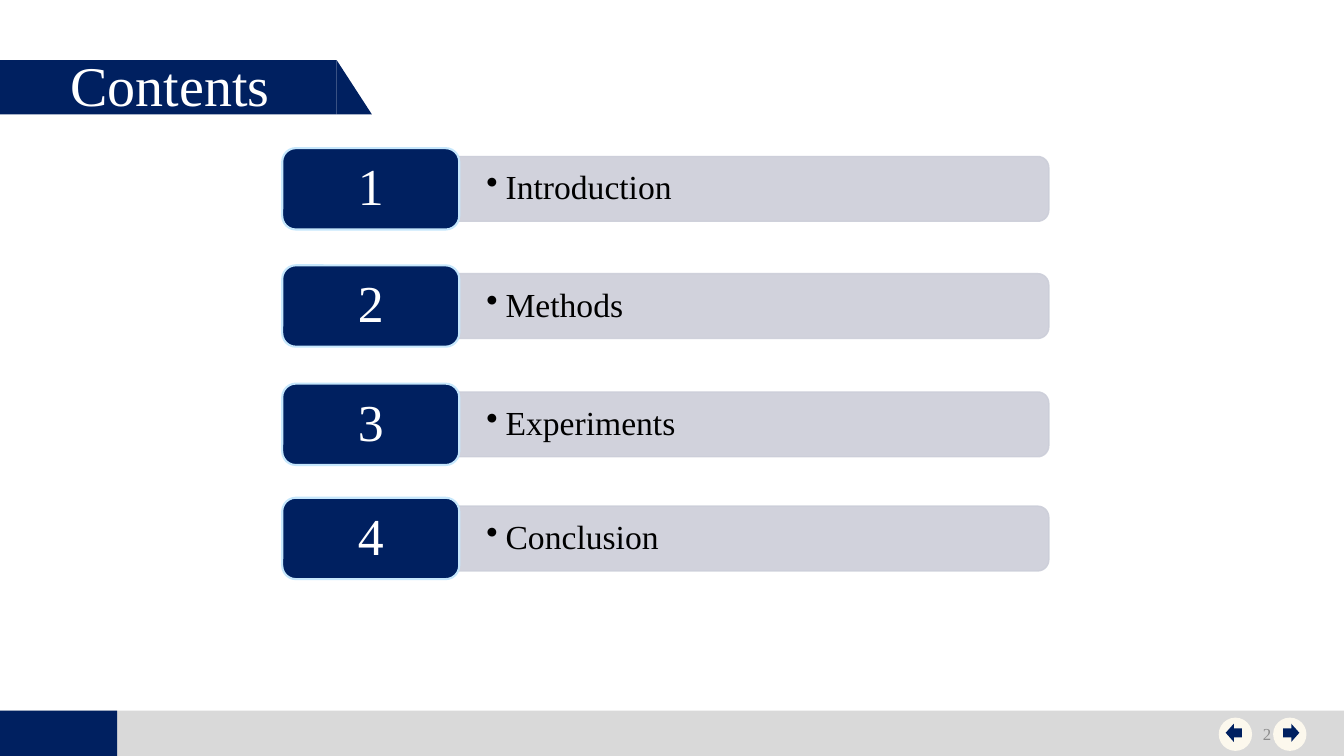
from dataclasses import dataclass
from math import cos, pi, sin

from lxml.etree import SubElement
from pptx import Presentation
from pptx.dml.color import RGBColor
from pptx.enum.shapes import MSO_SHAPE
from pptx.enum.text import MSO_ANCHOR, MSO_AUTO_SIZE, PP_ALIGN
from pptx.oxml.ns import qn
from pptx.util import Inches, Pt

NAVY = RGBColor(0x00, 0x20, 0x60)
GREY = RGBColor(0xD9, 0xD9, 0xD9)
BAR = RGBColor(0xCC, 0xCE, 0xD9)
SKY = RGBColor(0xC6, 0xE7, 0xFC)
CREAM = RGBColor(0xFC, 0xF8, 0xED)
WHITE = RGBColor(0xFF, 0xFF, 0xFF)
BLACK = RGBColor(0x00, 0x00, 0x00)
PAGE_GREY = RGBColor(0x8C, 0x8C, 0x8C)
FONT = "Times New Roman"

prs = Presentation()
prs.slide_width, prs.slide_height = Inches(13.33), Inches(7.5)
slide = prs.slides.add_slide(prs.slide_layouts[5])


@dataclass
class Box:
    """A rectangle in percent of the slide's width and height."""
    left: float
    top: float
    width: float
    height: float

    def emu(self) -> tuple[int, int, int, int]:
        w, h = prs.slide_width / 100, prs.slide_height / 100
        return (round(self.left * w), round(self.top * h),
                round(self.width * w), round(self.height * h))


@dataclass
class Section:
    number: int
    name: str
    top: float


@dataclass
class NavButton:
    left: float
    arrow_left: float
    arrow: MSO_SHAPE


SECTIONS = [
    Section(1, "Introduction", 19.6),
    Section(2, "Methods", 35.1),
    Section(3, "Experiments", 50.75),
    Section(4, "Conclusion", 65.85),
]
BUTTONS = [
    NavButton(94.73, 95.48, MSO_SHAPE.RIGHT_ARROW),
    NavButton(90.68, 91.2, MSO_SHAPE.LEFT_ARROW),
]


def paint(sp, fill: RGBColor, line: RGBColor | None = None, width: float = 1) -> None:
    sp.shadow.inherit = False
    sp.fill.solid()
    sp.fill.fore_color.rgb = fill
    if line is None:
        sp.line.fill.background()
    else:
        sp.line.color.rgb = line
        sp.line.width = Pt(width)


def add_block(kind: MSO_SHAPE, box: Box, fill: RGBColor, **line):
    sp = slide.shapes.add_shape(kind, *box.emu())
    paint(sp, fill, **line)
    return sp


def add_bar(box: Box, radius: int):
    """Draw a bar whose two right corners are rounded."""
    x, y, w, h = box.emu()
    right, steps = x + w - radius, 8
    arc = [(right + radius * cos(a), radius * sin(a))
           for a in (i * pi / 2 / steps for i in range(steps + 1))]
    lower = [(px, y + h - radius + dy) for px, dy in arc]
    upper = [(px, y + radius - dy) for px, dy in reversed(arc)]
    builder = slide.shapes.build_freeform(x, y)
    builder.add_line_segments(upper + lower + [(x, y + h)], close=True)
    sp = builder.convert_to_shape()
    paint(sp, BAR, line=BAR)
    for color in sp._element.spPr.iter(qn("a:srgbClr")):
        SubElement(color, qn("a:alpha"), val="90000")
    return sp


def write(sp, text: str, *, size: float, color: RGBColor,
          align: PP_ALIGN = PP_ALIGN.LEFT, anchor: MSO_ANCHOR = MSO_ANCHOR.MIDDLE,
          insets: tuple[float, ...] = (0.1, 0.05, 0.1, 0.05), spacing: float = 1,
          after: float = 0, bullet: bool = False) -> None:
    tf = sp.text_frame
    tf.word_wrap = True
    tf.vertical_anchor = anchor
    (tf.margin_left, tf.margin_top,
     tf.margin_right, tf.margin_bottom) = map(Inches, insets)
    p = tf.paragraphs[0]
    p.alignment, p.line_spacing, p.space_after = align, spacing, Pt(after)
    r = p.add_run()
    r.text = text
    r.font.name, r.font.size, r.font.color.rgb = FONT, Pt(size), color
    if bullet:
        p.level = 1
        pPr = p._p.get_or_add_pPr()
        pPr.set("marL", str(Inches(0.19)))
        pPr.set("indent", str(-Inches(0.19)))
        SubElement(pPr, qn("a:buChar"), char="•")


# Footer band
add_block(MSO_SHAPE.RECTANGLE, Box(0, 94, 100, 6), GREY)
add_block(MSO_SHAPE.RECTANGLE, Box(0, 94, 8.72, 6), NAVY)

# Title banner, with the title placed in front of it
add_block(MSO_SHAPE.RECTANGLE, Box(0, 7.95, 25.05, 7.2), NAVY)
add_block(MSO_SHAPE.RIGHT_TRIANGLE, Box(25.05, 7.95, 2.63, 7.2), NAVY)
title = slide.shapes.title
title.left, title.top, title.width, title.height = Box(4.5, 6, 19.8, 10.27).emu()
write(title, "Contents", size=40, color=WHITE, anchor=MSO_ANCHOR.TOP)
title.text_frame.auto_size = MSO_AUTO_SIZE.SHAPE_TO_FIT_TEXT
slide.shapes._spTree.append(title._element)

# Navigation buttons
for button in BUTTONS:
    add_block(MSO_SHAPE.OVAL, Box(button.left, 94.93, 2.48, 4.4), CREAM)
    add_block(button.arrow, Box(button.arrow_left, 95.73, 1.2, 2.4), NAVY)

# Section rows
for section in SECTIONS:
    bar = add_bar(Box(34.17, section.top + 1.1, 43.87, 8.57), Inches(0.11))
    write(bar, section.name, size=24, color=BLACK, bullet=True,
          insets=(0.27, 0.17, 0.3, 0.17), spacing=0.9, after=3.6)
    tile = add_block(MSO_SHAPE.ROUNDED_RECTANGLE, Box(21, section.top, 13.17, 10.76),
                     NAVY, line=SKY, width=1.5)
    write(tile, str(section.number), size=37, color=WHITE, align=PP_ALIGN.CENTER,
          insets=(0.19, 0.12, 0.19, 0.12), spacing=0.9, after=13)

# Page number
page = slide.shapes.add_textbox(*Box(72.82, 94.4, 22.5, 5.33).emu())
write(page, "2", size=12, color=PAGE_GREY, align=PP_ALIGN.RIGHT)

prs.save("out.pptx")
